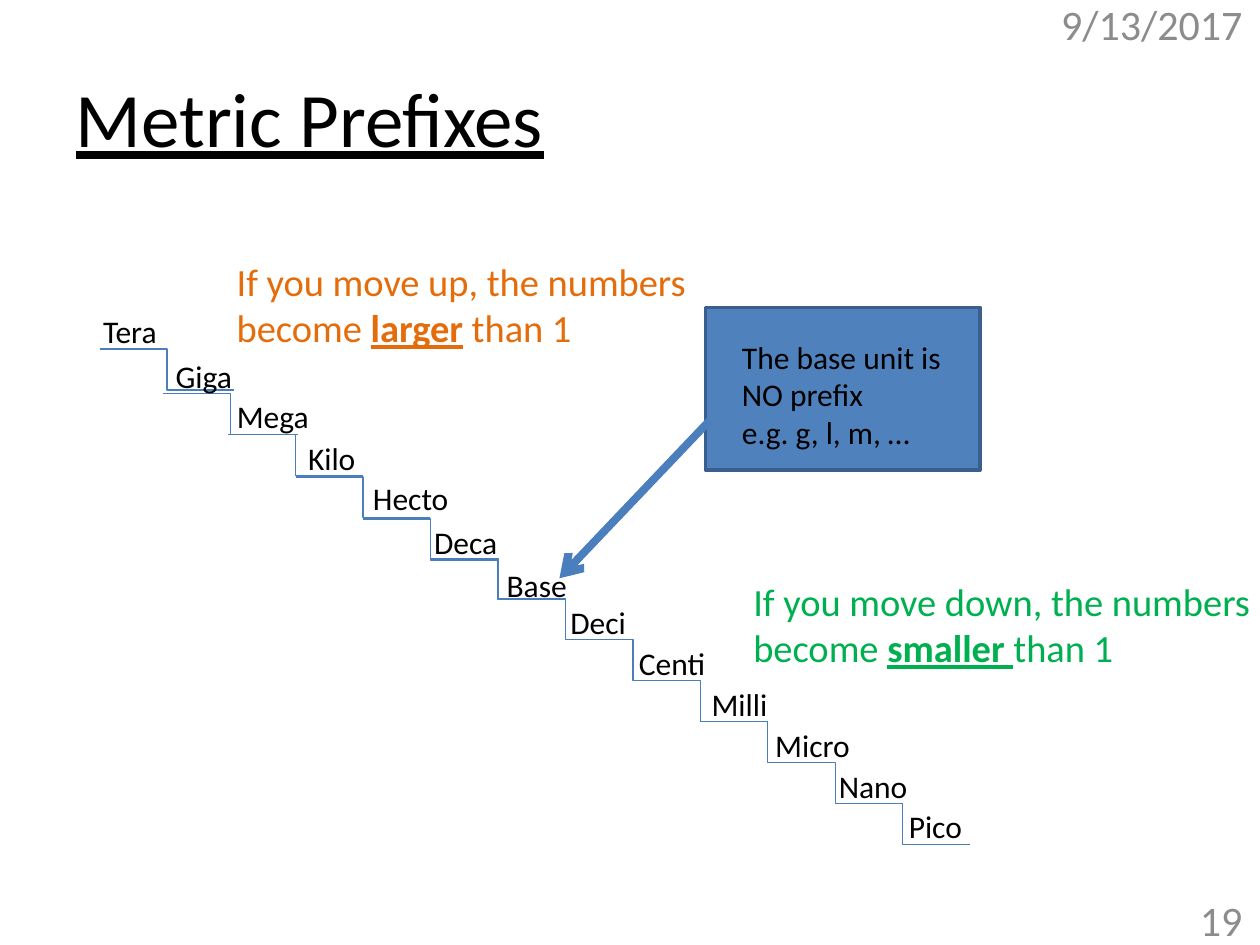
from collections import namedtuple

from lxml.etree import SubElement
from pptx import Presentation
from pptx.dml.color import RGBColor
from pptx.enum.shapes import MSO_CONNECTOR, MSO_SHAPE
from pptx.enum.text import MSO_ANCHOR, MSO_AUTO_SIZE, PP_ALIGN
from pptx.oxml.ns import qn
from pptx.util import Inches, Pt

# The slide is a grid of 100 columns by 75 rows
SLIDE_W, SLIDE_H = Inches(10), Inches(7.5)
COL, ROW = SLIDE_W / 100, SLIDE_H / 75
Box = namedtuple("Box", "left top width height")

FONT = "Calibri"
BLACK, GREY = "000000", "8C8C8C"
BLUE, BLUE_EDGE, BLUE_LINE = "4F81BD", "3A5F8C", "4B7EBC"
ORANGE, GREEN = "E46C0A", "00B050"

# Prefix, label width, and label shift from its step (columns, rows)
PREFIXES = [
    ("Tera", 6.3, -0.2, -0.3), ("Giga", 6.5, 0.2, 0), ("Mega", 7.8, -0.3, -0.1),
    ("Kilo", 5.8, 0, 0), ("Hecto", 8.1, -0.2, -0.1), ("Deca", 7.1, -0.7, 0.2),
    ("Base", 6.8, -0.3, 0.3), ("Deci", 6.5, -0.6, 0), ("Centi", 7.4, -0.5, 0),
    ("Milli", 6.5, -0.1, 0), ("Micro", 8, -0.4, 0), ("Nano", 7.5, -0.7, 0),
    ("Pico", 6.3, -0.5, 0),
]
# Steps that sit slightly off the even staircase (columns, rows)
STEP_SHIFTS = {0: (0.5, -0.3), 1: (0.2, 0), 3: (0, 0.1), 4: (0, 0.2), 5: (0, 0.1)}


def color(hex_string):
    return RGBColor.from_string(hex_string)


def emu(box):
    return (round(box.left * COL), round(box.top * ROW),
            round(box.width * COL), round(box.height * ROW))


def add_run(paragraph, text, size, hue, bold=False, underline=False):
    run = paragraph.add_run()
    run.text = text
    font = run.font
    font.name, font.size = FONT, Pt(size)
    font.bold, font.underline = bold, underline
    font.color.rgb = color(hue)


def add_text(shapes, box, paragraphs, size, hue, wrap=True, grow=True,
             align=PP_ALIGN.LEFT, anchor=MSO_ANCHOR.TOP):
    """Each paragraph is a list of (text, emphasised) runs."""
    frame = shapes.add_textbox(*emu(box)).text_frame
    frame.word_wrap = wrap
    frame.auto_size = MSO_AUTO_SIZE.SHAPE_TO_FIT_TEXT if grow else MSO_AUTO_SIZE.NONE
    frame.vertical_anchor = anchor
    for index, runs in enumerate(paragraphs):
        paragraph = frame.add_paragraph() if index else frame.paragraphs[0]
        paragraph.alignment = align
        for text, emphasised in runs:
            add_run(paragraph, text, size, hue, emphasised, emphasised)


def add_line(shapes, kind, box, weight):
    """Runs from the box's top left to its bottom right; sizes may be negative."""
    left, top, width, height = emu(box)
    line = shapes.add_connector(kind, left, top, left + width, top + height)
    line.line.color.rgb = color(BLUE_LINE)
    line.line.width = Pt(weight)
    SubElement(line._element.spPr, qn("a:effectLst"))
    return line


def place_title(slide, box):
    title = slide.shapes.title
    title.left, title.top, title.width, title.height = emu(box)
    title.text_frame.vertical_anchor = MSO_ANCHOR.MIDDLE
    heading = title.text_frame.paragraphs[0]
    heading.alignment = PP_ALIGN.LEFT
    add_run(heading, "Metric Prefixes", 44, BLACK, underline=True)


def place_corner_note(slide, box, text):
    add_text(slide.shapes, box, [[(text, False)]], 24, GREY, grow=False,
             align=PP_ALIGN.RIGHT, anchor=MSO_ANCHOR.MIDDLE)


def place_direction(slide, box, direction, emphasis, ending, hue):
    opening = f"If you move {direction}, the numbers become "
    add_text(slide.shapes, box,
             [[(opening, False), (emphasis, True), (ending, False)]], 22, hue)


def place_base_unit(slide, box):
    # Panel with its explanation
    callout = slide.shapes.add_group_shape().shapes
    panel = callout.add_shape(MSO_SHAPE.RECTANGLE, *emu(box))
    panel.shadow.inherit = False
    panel.fill.solid()
    panel.fill.fore_color.rgb = color(BLUE)
    panel.line.color.rgb = color(BLUE_EDGE)
    panel.line.width = Pt(2)
    add_text(callout, Box(box.left + 1.9, box.top + 1.9, box.width - 3.8, 9.2),
             [[("The base unit is NO prefix", False)], [("e.g. g, l, m, …", False)]],
             18, BLACK)
    # Arrow down to the base step
    arrow = add_line(slide.shapes, MSO_CONNECTOR.STRAIGHT,
                     Box(box.left + 0.3, box.top + 9, -11.9, 12.5), 4.5)
    SubElement(arrow.line._get_or_add_ln(), qn("a:tailEnd"), type="arrow")


def place_staircase(slide, box):
    step_w = box.width / len(PREFIXES)
    step_h = box.height / (len(PREFIXES) - 1)
    # Each step spans two treads and the riser between them
    for index in range(len(PREFIXES) - 1):
        right, down = STEP_SHIFTS.get(index, (0, 0))
        add_line(slide.shapes, MSO_CONNECTOR.ELBOW,
                 Box(box.left + index * step_w + right,
                     box.top + index * step_h + down, 2 * step_w, step_h), 0.75)
    # Labels stand on the treads
    for index, (prefix, width, right, down) in enumerate(PREFIXES):
        add_text(slide.shapes,
                 Box(box.left + index * step_w + right,
                     box.top + index * step_h - 3.4 + down, width, 4),
                 [[(prefix, False)]], 18, BLACK, wrap=False)


def main():
    deck = Presentation()
    deck.slide_width, deck.slide_height = SLIDE_W, SLIDE_H
    slide = deck.slides.add_slide(deck.slide_layouts[5])
    place_title(slide, Box(5, 3, 90, 12.5))
    place_base_unit(slide, Box(56, 24.4, 21.8, 12.9))
    place_direction(slide, Box(58.8, 45.4, 42.8, 8.4), "down", "smaller ", "than 1", GREEN)
    place_direction(slide, Box(17.8, 20, 40, 8.4), "up", "larger", " than 1", ORANGE)
    place_staircase(slide, Box(7.4, 28, 69.6, 39))
    place_corner_note(slide, Box(82.5, -0.1, 17.1, 4), "9/13/2017")
    place_corner_note(slide, Box(92.9, 71, 6.7, 4), "19")
    deck.save("out.pptx")


if __name__ == "__main__":
    main()
